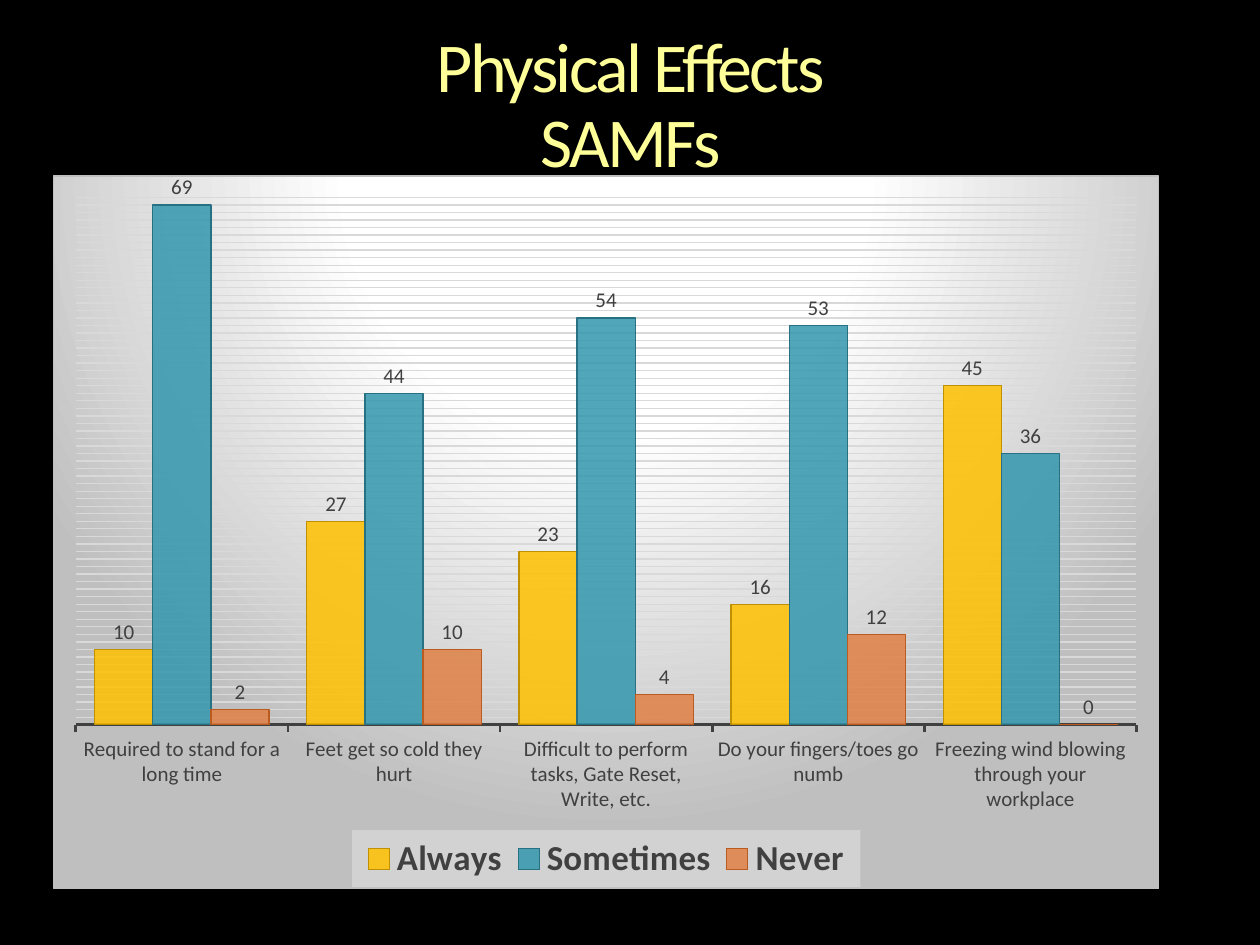
from dataclasses import dataclass

from lxml.etree import SubElement
from pptx import Presentation
from pptx.chart.data import CategoryChartData
from pptx.dml.color import RGBColor
from pptx.enum.chart import (XL_CHART_TYPE, XL_LABEL_POSITION,
                             XL_LEGEND_POSITION, XL_TICK_MARK)
from pptx.enum.text import MSO_AUTO_SIZE, PP_ALIGN
from pptx.oxml import parse_xml
from pptx.oxml.ns import nsdecls, qn
from pptx.util import Cm, Pt


@dataclass(frozen=True)
class Theme:
    font: str = "Calibri"
    background: str = "000000"
    title: str = "FFFF99"
    text: str = "404040"
    grid: str = "D9D9D9"
    panel: str = "FFFFFF"
    panel_edge: str = "BFBFBF"
    legend: str = "F2F2F2"
    title_size: int = 40
    label_size: int = 12
    legend_size: int = 20
    thin: float = 0.75
    thick: float = 1.5


THEME = Theme()

CATEGORIES = [
    "Required to stand for a long time",
    "Feet get so cold they hurt",
    "Difficult to perform tasks, Gate Reset, Write, etc.",
    "Do your fingers/toes go numb",
    "Freezing wind blowing through your workplace",
]
# Name, values, fill, outline
SERIES = [
    ("Always", (10, 27, 23, 16, 45), "FFC000", "BF9000"),
    ("Sometimes", (69, 44, 54, 53, 36), "3497AE", "277183"),
    ("Never", (2, 10, 4, 12, 0), "DF8045", "BB5B20"),
]


def color(value):
    return RGBColor.from_string(value)


def style_font(font, size, value, bold=False):
    font.name = THEME.font
    font.size = Pt(size)
    font.bold = bold
    font.color.rgb = color(value)


def style_line(line, value, width):
    line.color.rgb = color(value)
    line.width = Pt(width)


def set_layout(parent, left, top, width, height, after=None, inner=False):
    """Place a chart part by fractions of the chart area."""
    for old in parent.findall(qn("c:layout")):
        parent.remove(old)
    layout = parse_xml(f"<c:layout {nsdecls('c')}/>")
    manual = SubElement(layout, qn("c:manualLayout"))
    if inner:
        SubElement(manual, qn("c:layoutTarget"), val="inner")
    for mode in ("xMode", "yMode"):
        SubElement(manual, qn(f"c:{mode}"), val="edge")
    for name, value in zip("xywh", (left, top, width, height)):
        SubElement(manual, qn(f"c:{name}"), val=str(value))
    if after is None:
        parent.insert(0, layout)
    else:
        after.addnext(layout)


def add_title(slide, text):
    shape = slide.shapes.add_textbox(Cm(1.07), Cm(0.64), Cm(23.29), Cm(3.07))
    frame = shape.text_frame
    frame.word_wrap = True
    frame.auto_size = MSO_AUTO_SIZE.SHAPE_TO_FIT_TEXT
    frame.margin_left = frame.margin_right = 0
    frame.margin_top = frame.margin_bottom = 0
    paragraph = frame.paragraphs[0]
    paragraph.text = text
    paragraph.alignment = PP_ALIGN.CENTER
    paragraph.line_spacing = 0.9
    style_font(paragraph.font, THEME.title_size, THEME.title)
    # Tight letter spacing
    for run in paragraph.runs:
        run._r.get_or_add_rPr().set("spc", "-150")


def add_chart(slide):
    data = CategoryChartData()
    data.categories = CATEGORIES
    for name, values, *_ in SERIES:
        data.add_series(name, values)
    frame = slide.shapes.add_chart(XL_CHART_TYPE.COLUMN_CLUSTERED, Cm(1.07),
                                   Cm(3.53), Cm(22.3), Cm(14.4), data)
    chart = frame.chart
    chart.has_title = False
    style_font(chart.font, THEME.label_size, THEME.text)
    return chart


def style_panel(chart):
    """Radial gradient behind the whole chart."""
    stops = "".join(
        f'<a:gs pos="{position}"><a:srgbClr val="{value}"/></a:gs>'
        for position, value in ((0, THEME.panel), (39000, THEME.panel),
                                (100000, THEME.panel_edge)))
    chart._chartSpace.chart.addnext(parse_xml(
        f'<c:spPr {nsdecls("c", "a")}><a:gradFill><a:gsLst>{stops}</a:gsLst>'
        '<a:path path="circle"><a:fillToRect l="50000" t="-80000" '
        'r="50000" b="180000"/></a:path></a:gradFill>'
        f'<a:ln w="{Pt(THEME.thin)}"><a:solidFill>'
        f'<a:srgbClr val="{THEME.panel_edge}"/></a:solidFill></a:ln></c:spPr>'))


def style_axes(chart):
    category_axis = chart.category_axis
    category_axis.major_tick_mark = XL_TICK_MARK.OUTSIDE
    style_font(category_axis.tick_labels.font, THEME.label_size, THEME.text)
    style_line(category_axis.format.line, THEME.text, THEME.thick)
    value_axis = chart.value_axis
    value_axis.minimum_scale, value_axis.maximum_scale = 0, 70
    value_axis.major_unit = 1
    value_axis.has_major_gridlines = True
    style_line(value_axis.major_gridlines.format.line, THEME.grid, THEME.thin)
    value_axis.visible = False


def style_series(chart):
    plot = chart.plots[0]
    plot.gap_width = 65
    plot.overlap = 0
    plot.vary_by_categories = False
    for series, (_, _, fill, outline) in zip(plot.series, SERIES):
        series.format.fill.solid()
        series.format.fill.fore_color.rgb = color(fill)
        fill_color = series._element.find(
            f"{qn('c:spPr')}/{qn('a:solidFill')}/{qn('a:srgbClr')}")
        SubElement(fill_color, qn("a:alpha"), val="85000")
        style_line(series.format.line, outline, THEME.thin)
        labels = series.data_labels
        labels.show_value = True
        labels.position = XL_LABEL_POSITION.OUTSIDE_END
        style_font(labels.font, THEME.label_size, THEME.text)


def add_legend(chart):
    chart.has_legend = True
    legend = chart.legend
    legend.position = XL_LEGEND_POSITION.BOTTOM
    legend.include_in_layout = False
    style_font(legend.font, THEME.legend_size, THEME.text, bold=True)
    element = legend._element
    set_layout(element, 0.27, 0.92, 0.46, 0.08,
               after=element.find(qn("c:legendPos")))
    # Translucent backing
    element.find(qn("c:overlay")).addnext(parse_xml(
        f'<c:spPr {nsdecls("c", "a")}><a:solidFill>'
        f'<a:srgbClr val="{THEME.legend}"><a:alpha val="39000"/></a:srgbClr>'
        '</a:solidFill></c:spPr>'))


def main():
    presentation = Presentation()
    presentation.slide_width, presentation.slide_height = Cm(25.4), Cm(19.05)
    slide = presentation.slides.add_slide(presentation.slide_layouts[6])
    slide.background.fill.solid()
    slide.background.fill.fore_color.rgb = color(THEME.background)

    # Heading
    add_title(slide, "Physical Effects\vSAMFs")

    # Survey answers
    chart = add_chart(slide)
    style_panel(chart)
    style_axes(chart)
    style_series(chart)
    add_legend(chart)
    set_layout(chart._chartSpace.chart.plotArea, 0.02, 0.03, 0.96, 0.74,
               inner=True)

    presentation.save("out.pptx")


if __name__ == "__main__":
    main()
